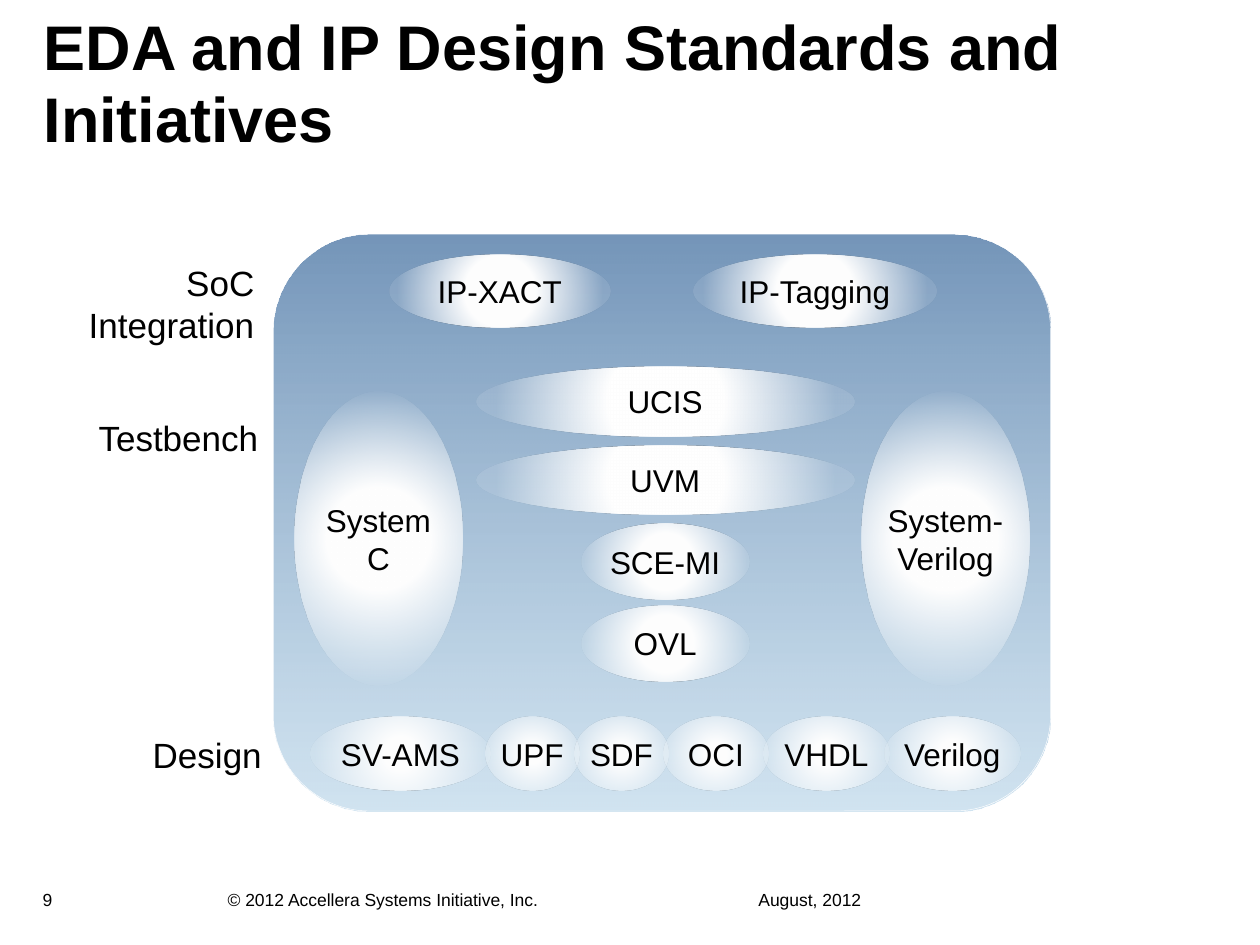
from pptx import Presentation
from pptx.dml.color import RGBColor
from pptx.enum.shapes import MSO_SHAPE
from pptx.enum.text import MSO_ANCHOR, MSO_AUTO_SIZE, PP_ALIGN
from pptx.oxml import parse_xml
from pptx.oxml.ns import nsdecls
from pptx.util import Cm, Pt

ROUNDED, ELLIPSE = MSO_SHAPE.ROUNDED_RECTANGLE, MSO_SHAPE.OVAL
LEFT, CENTER, RIGHT = PP_ALIGN.LEFT, PP_ALIGN.CENTER, PP_ALIGN.RIGHT
MIDDLE = MSO_ANCHOR.MIDDLE
GROW = MSO_AUTO_SIZE.SHAPE_TO_FIT_TEXT

FONT = "Arial"
COLORS = {"text": "000000", "white": "FFFFFF", "sky": "90BDDC", "navy": "1C528D"}

LINEAR_UP = '<a:lin ang="16200000" scaled="0"/>'
RADIAL = ('<a:path path="circle">'
          '<a:fillToRect l="50000" t="50000" r="50000" b="50000"/></a:path>')

STACK_CENTER = 13.41
DESIGN_OVERLAP = 0.1


def write_text(box, text, size, align=LEFT, bold=False):
    para = box.text_frame.paragraphs[0]
    para.text = text
    para.alignment = align
    for span in para.runs:
        span.font.name = FONT
        span.font.size = Pt(size)
        span.font.bold = bold
        span.font.color.rgb = RGBColor.from_string(COLORS["text"])
    return para


def remove_side_insets(frame):
    frame.margin_left = frame.margin_right = 0
    frame.vertical_anchor = MIDDLE


def add_text(page, text, left, top, width, height, size,
             align=LEFT, wrap=True, grow=True):
    box = page.shapes.add_textbox(Cm(left), Cm(top), Cm(width), Cm(height))
    box.text_frame.word_wrap = wrap
    if grow:
        box.text_frame.auto_size = GROW
    write_text(box, text, size, align)


def add_title(page, text):
    box = page.shapes.add_textbox(Cm(0.88), Cm(0.87), Cm(23.67), Cm(1.68))
    box.text_frame.word_wrap = True
    remove_side_insets(box.text_frame)
    write_text(box, text, 36, bold=True).line_spacing = 0.95


def set_gradient(shape, stops, direction):
    """Fill with (position %, colour name, opacity %) stops."""
    stop_xml = "".join(
        f'<a:gs pos="{position * 1000}"><a:srgbClr val="{COLORS[color]}">'
        f'<a:alpha val="{opacity * 1000}"/></a:srgbClr></a:gs>'
        for position, color, opacity in stops)
    fill = parse_xml(f'<a:gradFill {nsdecls("a")} rotWithShape="1">'
                     f'<a:gsLst>{stop_xml}</a:gsLst>{direction}</a:gradFill>')
    shape.element.spPr.find(
        "{http://schemas.openxmlformats.org/drawingml/2006/main}prstGeom").addnext(fill)


def add_panel(page):
    panel = page.shapes.add_shape(ROUNDED, Cm(5.51), Cm(4.72), Cm(15.67), Cm(11.63))
    panel.shadow.inherit = False
    panel.line.color.rgb = RGBColor.from_string(COLORS["white"])
    panel.line.width = Pt(0.25)
    set_gradient(panel, [(0, "sky", 42), (100, "navy", 61)], LINEAR_UP)


def add_standard(page, text, left, top, width, height, core=30, edge=10, wrap=True):
    """Glowing ellipse: core is the solid centre %, edge the rim opacity %."""
    ellipse = page.shapes.add_shape(ELLIPSE, Cm(left), Cm(top), Cm(width), Cm(height))
    ellipse.shadow.inherit = False
    ellipse.line.fill.background()
    set_gradient(ellipse, [(core, "white", 100), (88, "white", edge)], RADIAL)
    ellipse.text_frame.word_wrap = wrap
    remove_side_insets(ellipse.text_frame)
    write_text(ellipse, text, 18, CENTER)


def main():
    deck = Presentation()
    deck.slide_width, deck.slide_height = Cm(25.4), Cm(19.05)
    page = deck.slides.add_slide(deck.slide_layouts[6])

    # Footer and title
    add_text(page, "© 2012 Accellera Systems Initiative, Inc.",
             4.34, 17.79, 15.21, 0.68, 10)
    add_text(page, "August, 2012", 15.04, 17.8, 2.59, 0.68, 10, wrap=False)
    add_text(page, "9", 0.61, 17.8, 3.73, 0.68, 10, grow=False)
    add_title(page, "EDA and IP Design Standards and Initiatives")

    add_panel(page)

    # Level labels beside the panel
    for text, left, top, width, height in [
            ("SoC\nIntegration", 1.49, 5.14, 3.89, 1.96),
            ("Testbench", 1.7, 8.27, 3.76, 1.12),
            ("Design", 2.79, 14.66, 2.74, 1.12)]:
        add_text(page, text, left, top, width, height, 20, RIGHT, wrap=False)

    # Integration row
    for text, left, width in [("IP-XACT", 7.85, 4.45), ("IP-Tagging", 13.99, 4.88)]:
        add_standard(page, text, left, 5.13, width, 1.48)

    # Languages on both sides
    for text, left in [("SystemC", 5.94), ("System-Verilog", 17.37)]:
        add_standard(page, text, left, 7.9, 3.38, 5.92, edge=0)

    # Centred testbench stack
    for text, top, width, height in [
            ("UCIS", 7.39, 7.62, 1.4), ("UVM", 8.98, 7.62, 1.4),
            ("SCE-MI", 10.56, 3.38, 1.52), ("OVL", 12.21, 3.38, 1.52)]:
        add_standard(page, text, STACK_CENTER - width / 2, top, width, height)

    # Design row, each ellipse slightly overlapping the one before
    left = 6.27
    for text, width in [("SV-AMS", 3.61), ("UPF", 1.9), ("SDF", 1.9),
                        ("OCI", 2.11), ("VHDL", 2.54), ("Verilog", 2.74)]:
        add_standard(page, text, left, 14.45, width, 1.48, core=16, wrap=False)
        left += width - DESIGN_OVERLAP

    deck.save("out.pptx")


if __name__ == "__main__":
    main()
